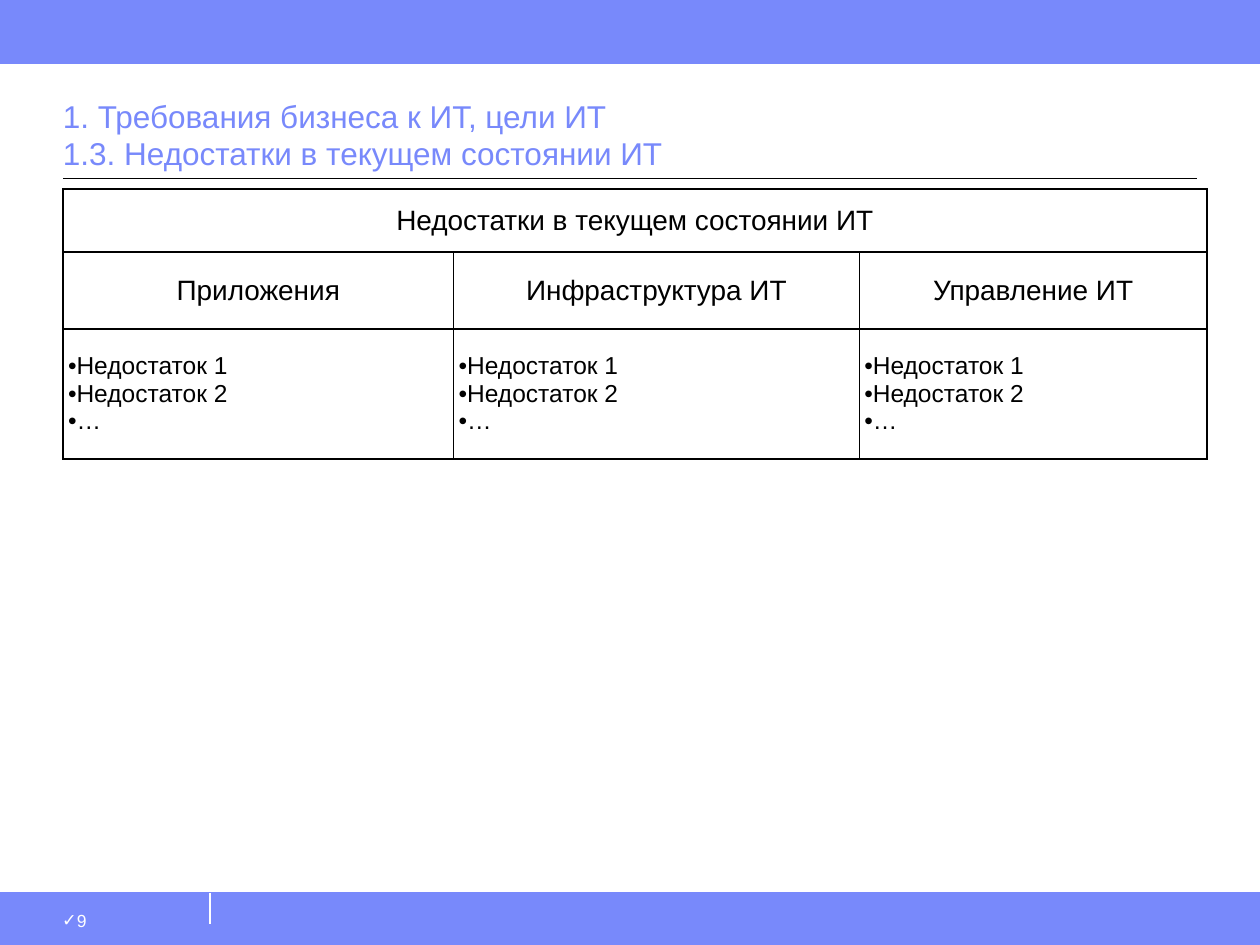
"""Build a slide listing the shortcomings of the current IT state."""
from lxml.etree import SubElement as Sub
from pptx import Presentation
from pptx.dml.color import RGBColor
from pptx.enum.shapes import MSO_CONNECTOR as Link, MSO_SHAPE as Shape
from pptx.enum.text import MSO_ANCHOR as Anchor, PP_ALIGN as Align
from pptx.oxml import parse_xml
from pptx.oxml.ns import nsdecls, qn
from pptx.util import Pt

BLUE, BLACK, WHITE = "7889FB", "000000", "FFFFFF"
WIDE, HIGH = 720, 540
TITLE = ["1. Требования бизнеса к ИТ, цели ИТ", "1.3. Недостатки в текущем состоянии ИТ"]
HEAD = "Недостатки в текущем состоянии ИТ"
AREAS = ["Приложения", "Инфраструктура ИТ", "Управление ИТ"]
FLAWS = ["Недостаток 1", "Недостаток 2", "…"]
PAGE = "9"
COLS = [223.2, 231.84, 198.72]
ROWS = [36, 44, 74.16]
BANDS = [(510, 30), (0, 36)]
RULES = [
    (120, 528, 120, 510, WHITE, 0.75),
    (0, 30, WIDE, 30, BLUE, 0.5),
    (0, 510, WIDE, 510, BLUE, 0.5),
    (36, 102, 684, 102, BLACK, 0.75),
]


def color(code):
    return RGBColor.from_string(code)


def add_run(para, text, size, code):
    run = para.add_run()
    run.text = text
    run.font.size = Pt(size)
    run.font.name = "Arial"
    run.font.color.rgb = color(code)


def add_mark(para, sign, indent):
    props = para._p.get_or_add_pPr()
    props.set("marL", "0")
    props.set("indent", str(Pt(indent)))
    Sub(props, qn("a:buFont"), typeface="Arial")
    Sub(props, qn("a:buChar"), char=sign)


def add_band(shapes, top, high):
    band = shapes.add_shape(Shape.RECTANGLE, 0, Pt(top), Pt(WIDE), Pt(high))
    band.shadow.inherit = False
    band.fill.solid()
    band.fill.fore_color.rgb = color(BLUE)
    band.line.color.rgb = color(BLUE)
    band.line.width = Pt(0.75)


def add_rule(shapes, x1, y1, x2, y2, code, width):
    rule = shapes.add_connector(Link.STRAIGHT, Pt(x1), Pt(y1), Pt(x2), Pt(y2))
    rule.line.color.rgb = color(code)
    rule.line.width = Pt(width)
    Sub(rule._element.spPr, qn("a:effectLst"))


def add_box(shapes, place, inset, anchor):
    frame = shapes.add_textbox(*map(Pt, place)).text_frame
    frame.word_wrap = True
    frame.vertical_anchor = anchor
    frame.margin_left, frame.margin_top, frame.margin_right, frame.margin_bottom = map(Pt, inset)
    return frame.paragraphs[0]


def style_cell(cell):
    cell.fill.background()
    cell.vertical_anchor = Anchor.MIDDLE
    cell.margin_left = cell.margin_right = Pt(2.88)
    cell.margin_top = cell.margin_bottom = 0
    props = cell._tc.get_or_add_tcPr()
    for spot, side in enumerate("LRTB"):
        props.insert(spot, parse_xml(
            f'<a:ln{side} {nsdecls("a")} w="{Pt(1)}"><a:solidFill>'
            f'<a:srgbClr val="{BLACK}"/></a:solidFill></a:ln{side}>'))


def fill_head(cell, text):
    para = cell.text_frame.paragraphs[0]
    para.alignment = Align.CENTER
    add_run(para, text, 16, BLACK)


def fill_list(cell, items):
    frame = cell.text_frame
    for spot, item in enumerate(items):
        para = frame.add_paragraph() if spot else frame.paragraphs[0]
        add_mark(para, "•", -14.4)
        add_run(para, item, 14, BLACK)


def add_grid(shapes):
    grid = shapes.add_table(len(ROWS), len(COLS), Pt(36), Pt(108),
                            Pt(sum(COLS)), Pt(sum(ROWS))).table
    grid.first_row = grid.horz_banding = False
    for col, wide in zip(grid.columns, COLS):
        col.width = Pt(wide)
    for row, high in zip(grid.rows, ROWS):
        row.height = Pt(high)
        for cell in row.cells:
            style_cell(cell)
    grid.cell(0, 0).merge(grid.cell(0, len(COLS) - 1))
    fill_head(grid.cell(0, 0), HEAD)
    for spot, area in enumerate(AREAS):
        fill_head(grid.cell(1, spot), area)
        fill_list(grid.cell(2, spot), FLAWS)


def main():
    deck = Presentation()
    deck.slide_width, deck.slide_height = Pt(WIDE), Pt(HIGH)
    shapes = deck.slides.add_slide(deck.slide_layouts[6]).shapes
    for band in BANDS:
        add_band(shapes, *band)
    for rule in RULES:
        add_rule(shapes, *rule)
    title = add_box(shapes, (36, 36, 648, 66), (0, 3.6, 0, 3.6), Anchor.BOTTOM)
    for spot, line in enumerate(TITLE):
        if spot:
            title.add_line_break()
        add_run(title, line, 18, BLUE)
    page = add_box(shapes, (24, 515, 96, 25), (11.5, 5, 7.2, 3.6), Anchor.TOP)
    add_mark(page, "✓", 0)
    add_run(page, PAGE, 10, WHITE)
    add_grid(shapes)
    deck.save("out.pptx")


if __name__ == "__main__":
    main()
